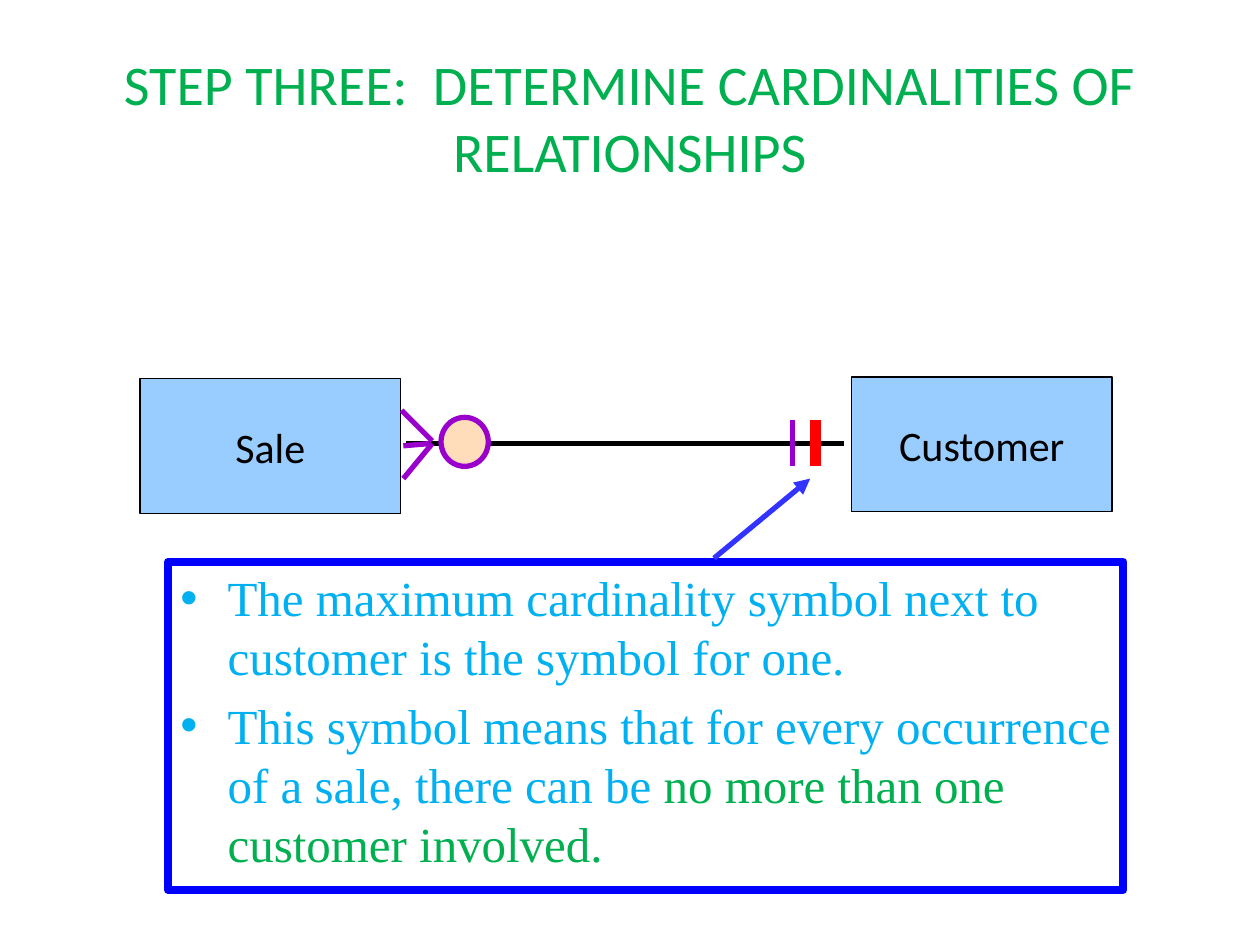
from dataclasses import dataclass

import pptx
import pptx.dml.color
import pptx.enum.shapes
import pptx.enum.text
import pptx.oxml.ns
import pptx.util
from lxml import etree

Pt = pptx.util.Pt
SHAPE = pptx.enum.shapes.MSO_SHAPE
ALIGN = pptx.enum.text.PP_ALIGN
ANCHOR = pptx.enum.text.MSO_ANCHOR
qn = pptx.oxml.ns.qn


@dataclass(frozen=True)
class Theme:
    green: str = "00B050"
    sky: str = "00B0F0"
    black: str = "000000"
    white: str = "FFFFFF"
    entity: str = "99CCFF"
    purple: str = "9900CC"
    peach: str = "FFDDBB"
    red: str = "FF0000"
    frame: str = "0000FF"
    arrow: str = "3333FF"
    sans: str = "Calibri"
    serif: str = "Times New Roman"
    title_size: int = 32
    note_size: int = 28
    entity_size: int = 24


T = Theme()


def rgb(value):
    return pptx.dml.color.RGBColor.from_string(value)


def format_run(r, font, size, color):
    r.font.name = font
    r.font.size = Pt(size)
    r.font.color.rgb = rgb(color)


def set_title(s, text):
    sp = s.shapes.title
    sp.left, sp.top, sp.width, sp.height = Pt(36), Pt(21.6), Pt(648), Pt(90)
    tf = sp.text_frame
    tf.text = text
    tf.word_wrap = True
    tf.vertical_anchor = ANCHOR.MIDDLE
    p = tf.paragraphs[0]
    p.alignment = ALIGN.CENTER
    format_run(p.runs[0], T.sans, T.title_size, T.green)


def add_box(s, kind, at, fill, line, width):
    sp = s.shapes.add_shape(kind, *map(Pt, at))
    sp.shadow.inherit = False
    sp.fill.solid()
    sp.fill.fore_color.rgb = rgb(fill)
    sp.line.color.rgb = rgb(line)
    sp.line.width = Pt(width)
    return sp


def add_entity(s, name, left, top):
    sp = add_box(s, SHAPE.RECTANGLE, (left, top, 149, 77),
                 T.entity, T.black, 0.75)
    tf = sp.text_frame
    tf.text = name
    tf.word_wrap = False
    tf.vertical_anchor = ANCHOR.MIDDLE
    p = tf.paragraphs[0]
    p.alignment = ALIGN.CENTER
    format_run(p.runs[0], T.sans, T.entity_size, T.black)


def add_line(s, start, end, color, width=3, arrow=False):
    cx = s.shapes.add_connector(pptx.enum.shapes.MSO_CONNECTOR.STRAIGHT,
                                *map(Pt, start + end))
    cx.line.color.rgb = rgb(color)
    cx.line.width = Pt(width)
    if arrow:
        etree.SubElement(cx.line._get_or_add_ln(), qn("a:tailEnd"),
                         type="triangle")
    etree.SubElement(cx._element.spPr, qn("a:effectLst"))


def add_bullet(p, indent):
    pPr = p._p.get_or_add_pPr()
    pPr.set("marL", str(Pt(indent)))
    pPr.set("indent", str(-Pt(indent)))
    etree.SubElement(pPr, qn("a:buFont"), typeface="Arial")
    etree.SubElement(pPr, qn("a:buChar"), char="•")


def add_note(s, paragraphs):
    """Framed bullet list; each paragraph is a list of (text, color)."""
    sp = add_box(s, SHAPE.RECTANGLE, (96, 321, 546, 187.5),
                 T.white, T.frame, 4.5)
    tf = sp.text_frame
    tf.word_wrap = True
    tf.vertical_anchor = ANCHOR.TOP
    for i, parts in enumerate(paragraphs):
        p = tf.add_paragraph() if i else tf.paragraphs[0]
        p.alignment = ALIGN.LEFT
        p.space_before = Pt(0.2 * T.note_size)
        add_bullet(p, 27)
        for text, color in parts:
            r = p.add_run()
            r.text = text
            format_run(r, T.serif, T.note_size, color)


def add_relationship(s):
    add_line(s, (232, 253.5), (482.5, 253.5), T.black)
    for x, color, width in ((453, T.purple, 3), (466, T.red, 6)):
        add_line(s, (x, 240), (x, 266.5), color, width)
    for start, end in (((247, 252), (229.5, 234.5)),
                       ((230.5, 254.75), (245.5, 253.5)),
                       ((247, 253.5), (230.5, 273.5))):
        add_line(s, start, end, T.purple)
    add_box(s, SHAPE.OVAL, (252, 238.5, 27, 28), T.peach, T.purple, 3)


def main():
    prs = pptx.Presentation()
    prs.slide_width, prs.slide_height = Pt(720), Pt(540)
    s = prs.slides.add_slide(prs.slide_layouts[5])
    set_title(s, "STEP THREE:  DETERMINE CARDINALITIES OF RELATIONSHIPS")
    add_entity(s, "Sale", 80, 216.5)
    add_entity(s, "Customer", 486.5, 215.5)
    add_relationship(s)
    add_note(s, [
        [("The maximum cardinality symbol next to customer is the symbol "
          "for one.", T.sky)],
        [("This symbol means that for every occurrence of a sale, "
          "there can be ", T.sky),
         ("no more than one customer involved.", T.green)],
    ])
    add_line(s, (408, 319), (463, 273.5), T.arrow, arrow=True)
    prs.save("out.pptx")


if __name__ == "__main__":
    main()
